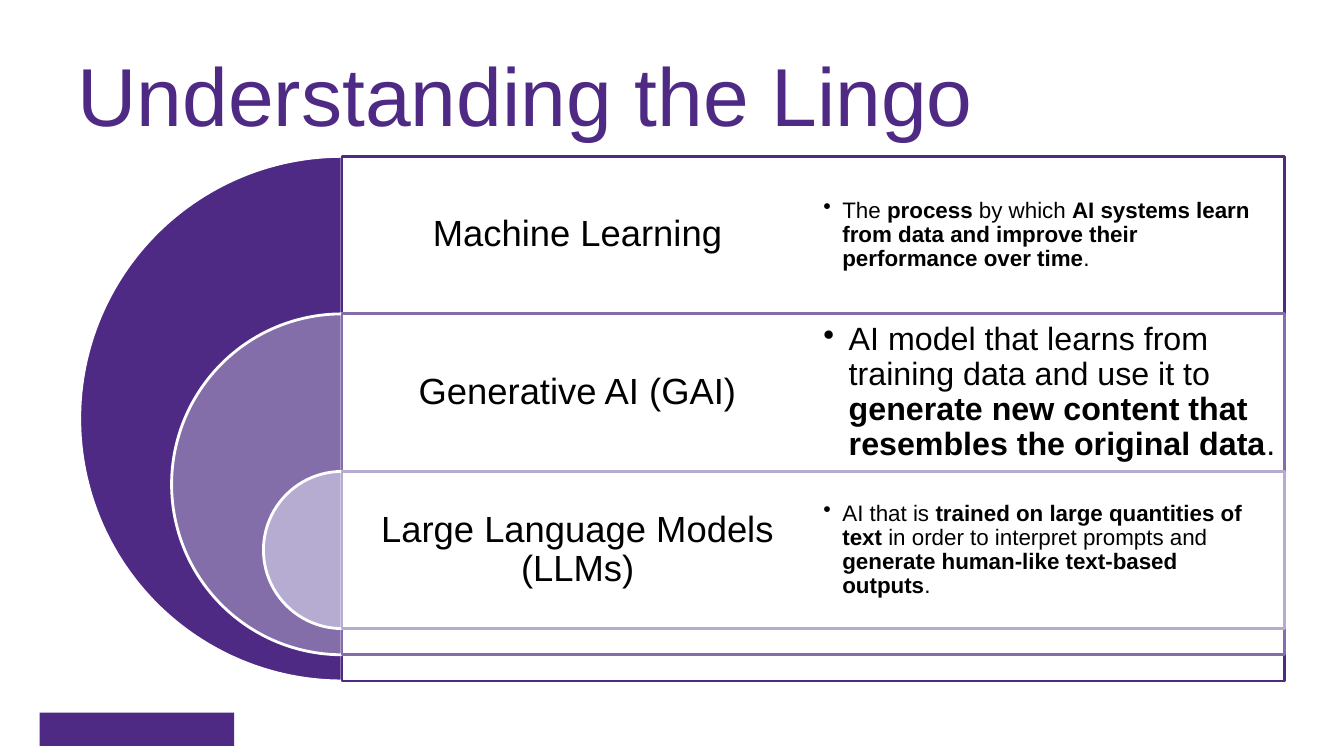
from lxml import etree
from pptx import Presentation
from pptx import util as u
from pptx.dml.color import RGBColor
from pptx.enum import shapes, text
from pptx.oxml.ns import qn

FONT = "Arial"
PURPLE = "4E2A84"
WHITE = "FFFFFF"
BLACK = "000000"
ROW_TOP = 3.94
ROW_HEIGHT = 3.97
CENTRE = 8.62
COLUMN = 11.88
LARGEST = 13.22
SHRINK = 4.63
TERMS = [
    ("Machine Learning", PURPLE, 16, 0.48, 0.25,
     "The **process** by which **AI systems learn from data and improve "
     "their performance over time**."),
    ("Generative AI (GAI)", "836EAA", 23, 0.64, 0.15,
     "AI model that learns from training data and use it to "
     "**generate new content that resembles the original data**."),
    ("Large Language Models (LLMs)", "B6ACD1", 16, 0.48, 0.45,
     "AI that is **trained on large quantities of text** in order to interpret "
     "prompts and **generate human-like text-based outputs**."),
]


def colour(value):
    return RGBColor.from_string(value)


def style_font(font, size, value):
    font.name = FONT
    font.size = u.Pt(size)
    font.color.rgb = colour(value)


def add_shape(slide, kind, box, fill, line=None):
    shape = slide.shapes.add_shape(kind, *map(u.Cm, box))
    shape.shadow.inherit = False
    shape.fill.solid()
    shape.fill.fore_color.rgb = colour(fill)
    if line:
        shape.line.color.rgb = colour(line)
        shape.line.width = u.Pt(2)
    else:
        shape.line.fill.background()
    return shape


def add_half_disc(slide, top, diameter, fill):
    box = (CENTRE - diameter / 2, top, diameter, diameter)
    disc = add_shape(slide, shapes.MSO_SHAPE.PIE, box, fill, WHITE)
    disc.adjustments[0] = 54
    disc.adjustments[1] = 162


def add_panel(slide, top, height, line):
    box = (CENTRE, top, 2 * COLUMN, height)
    panel = add_shape(slide, shapes.MSO_SHAPE.RECTANGLE, box, WHITE, line)
    fill_colour = panel.fill._xPr.find(qn("a:solidFill"))[0]
    etree.SubElement(fill_colour, qn("a:alpha"), val="90000")


def add_text(slide, left, top, left_inset, right_inset):
    box = slide.shapes.add_textbox(*map(u.Cm, (left, top, COLUMN, ROW_HEIGHT)))
    frame = box.text_frame
    frame.word_wrap = True
    frame.vertical_anchor = text.MSO_ANCHOR.MIDDLE
    frame.margin_left = u.Cm(left_inset)
    frame.margin_right = u.Cm(right_inset)
    frame.margin_top = frame.margin_bottom = u.Cm(left_inset)
    paragraph = frame.paragraphs[0]
    paragraph.line_spacing = 0.9
    return paragraph


def add_term(slide, top, term):
    paragraph = add_text(slide, CENTRE, top, 0.28, 0.28)
    paragraph.text = term
    paragraph.alignment = text.PP_ALIGN.CENTER
    style_font(paragraph.font, 26, BLACK)


def add_definition(slide, top, definition, size, indent, right_inset):
    paragraph = add_text(slide, CENTRE + COLUMN, top, 0.25, right_inset)
    properties = paragraph._p.get_or_add_pPr()
    properties.set("marL", str(u.Cm(indent)))
    properties.set("indent", str(-u.Cm(indent)))
    etree.SubElement(properties, qn("a:buChar"), char="•")
    for index, part in enumerate(definition.split("**")):
        run = paragraph.add_run()
        run.text = part
        style_font(run.font, size, BLACK)
        run.font.bold = index % 2 == 1


def add_title(slide, words):
    title = slide.shapes.title
    title.left, title.top, title.width, title.height = map(
        u.Cm, (1.7, 0.76, 30.48, 3.18))
    title.text_frame.vertical_anchor = text.MSO_ANCHOR.MIDDLE
    paragraph = title.text_frame.paragraphs[0]
    paragraph.text = words
    paragraph.alignment = text.PP_ALIGN.LEFT
    style_font(paragraph.font, 58.7, PURPLE)


def main():
    """Build the slide of nested AI terms and save it."""
    presentation = Presentation()
    presentation.slide_width = u.Cm(33.87)
    presentation.slide_height = u.Cm(19.05)
    slide = presentation.slides.add_slide(presentation.slide_layouts[5])
    add_shape(slide, shapes.MSO_SHAPE.RECTANGLE, (1, 17.96, 4.9, 0.84), PURPLE)
    add_title(slide, "Understanding the Lingo")
    for index, (term, fill, size, indent, inset, definition) in enumerate(TERMS):
        top = ROW_TOP + index * ROW_HEIGHT
        diameter = LARGEST - index * SHRINK
        add_half_disc(slide, top, diameter, fill)
        add_panel(slide, top, diameter, fill)
        add_term(slide, top, term)
        add_definition(slide, top, definition, size, indent, inset)
    presentation.save("out.pptx")


if __name__ == "__main__":
    main()
